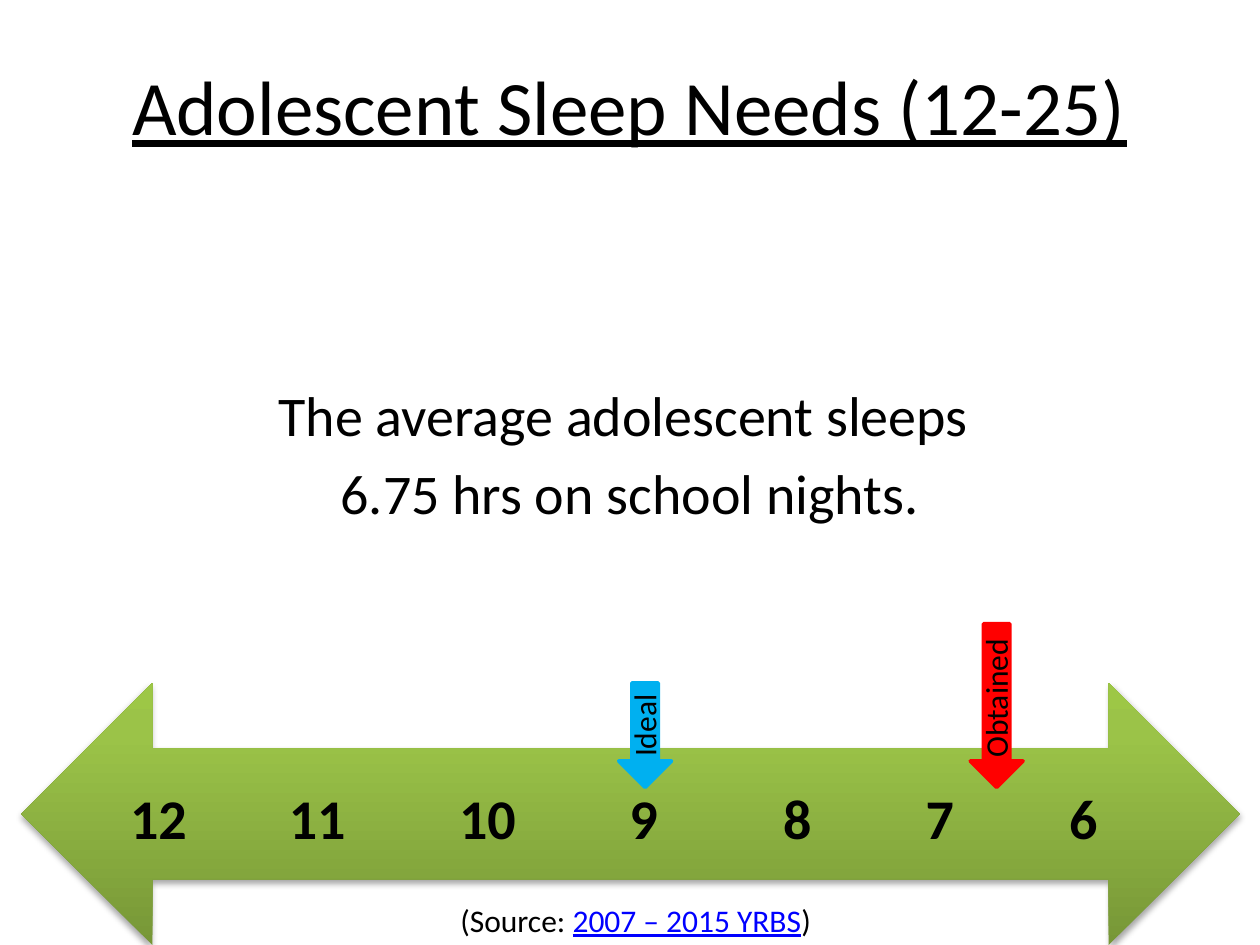
from copy import deepcopy

from lxml import etree
from pptx import Presentation
from pptx import util as u
from pptx.dml import color
from pptx.enum import shapes, text
from pptx.oxml import ns

BLACK, BLUE, RED, LINK = "000000", "00B0F0", "FF0000", "0000FF"
CENTER, LEFT = text.PP_ALIGN.CENTER, text.PP_ALIGN.LEFT


def rgb(value):
    return color.RGBColor.from_string(value)


def sub(parent, tag, **attrs):
    return etree.SubElement(parent, ns.qn(tag), attrs)


def add_run(p, wording, size, hue=BLACK, **extra):
    r = p.add_run()
    r.text = wording
    for name, value in {"name": "Calibri", "size": u.Pt(size), **extra}.items():
        setattr(r.font, name, value)
    r.font.color.rgb = rgb(hue)


def add_text(s, box, align=CENTER, anchor=text.MSO_ANCHOR.TOP):
    """Add an empty text box and return its text frame."""
    sp = s.shapes.add_textbox(*map(u.Inches, box))
    tf = sp.text_frame
    formats = {"word_wrap": True, "vertical_anchor": anchor,
               "auto_size": text.MSO_AUTO_SIZE.NONE}
    for name, value in formats.items():
        setattr(tf, name, value)
    tf.paragraphs[0].alignment = align
    return sp, tf


def add_title(s, box):
    sp, tf = add_text(s, box, anchor=text.MSO_ANCHOR.MIDDLE)
    add_run(tf.paragraphs[0], "Adolescent Sleep Needs (12-25)", 44, underline=True)


def add_statement(s, box):
    sp, tf = add_text(s, box)
    add_run(tf.paragraphs[0], "The average adolescent sleeps ", 32)
    p = tf.add_paragraph()
    p.alignment, p.space_before = CENTER, u.Pt(6.4)
    add_run(p, "6.75 hrs on school nights.", 32)


def add_scale(s, box):
    """Green double arrow with the hours of sleep along it."""
    x, y, w, h = box
    sp = s.shapes.add_shape(shapes.MSO_SHAPE.LEFT_RIGHT_ARROW, *map(u.Inches, box))
    sp.line.fill.background()

    # Three-stop gradient, from the bottom upwards
    sp.fill.gradient()
    sp.fill.gradient_angle = 90
    stop_list = sp._element.spPr.find(".//" + ns.qn("a:gsLst"))
    stop_list.append(deepcopy(stop_list[-1]))
    stops = [(0, "779737"), (0.8, "9BC348"), (1, "9DC746")]
    for stop, (position, hue) in zip(sp.fill.gradient_stops, stops):
        stop.position, stop.color.rgb = position, rgb(hue)

    # Soft shadow below
    sp.shadow.inherit = False
    effects = sp._element.spPr.find(ns.qn("a:effectLst"))
    shadow = sub(effects, "a:outerShdw", blurRad=str(u.Pt(3.1)), dist=str(u.Pt(1.8)),
                 dir="5400000", rotWithShape="0")
    sub(sub(shadow, "a:srgbClr", val=BLACK), "a:alpha", val="35000")

    # Hours, each centred on a tab stop
    hours = {12: 0.83, 11: 2.09, 10: 3.44, 9: 4.68, 8: 5.9, 7: 7.03, 6: 8.17}
    label, tf = add_text(s, (x + 0.16, y + 0.75, w - 0.59, 0.64), LEFT)
    p = tf.paragraphs[0]
    tabs = sub(p._p.get_or_add_pPr(), "a:tabLst")
    for position in hours.values():
        sub(tabs, "a:tab", pos=str(u.Inches(position)), algn="ctr")
    add_run(p, "".join(f"\t{hour}" for hour in hours), 32, bold=True)


def add_source(s, box):
    sp, tf = add_text(s, box)
    p = tf.paragraphs[0]
    add_run(p, "(Source: ", 18)
    add_run(p, "2007 – 2015 YRBS", 18, LINK, underline=True)
    add_run(p, ")", 18)


def add_marker(s, box, wording, hue, label_center, label_width):
    """Down arrow with an upright label; label_center is relative to the box."""
    x, y, w, h = box
    sp = s.shapes.add_shape(shapes.MSO_SHAPE.DOWN_ARROW, *map(u.Inches, box))
    sp.shadow.inherit = False
    sp.fill.solid()
    sp.fill.fore_color.rgb = rgb(hue)
    sp.line.color.rgb = rgb(hue)
    sp.line.width = u.Pt(2)

    dx, dy = label_center
    label_height = 0.4
    label, tf = add_text(s, (x + dx - label_width / 2, y + dy - label_height / 2,
                             label_width, label_height), LEFT)
    label.rotation = 270
    add_run(tf.paragraphs[0], wording, 18)


def main():
    prs = Presentation()
    prs.slide_width, prs.slide_height = u.Inches(10), u.Inches(7.5)
    s = prs.slides.add_slide(prs.slide_layouts[6])
    add_title(s, (0.33, 0.42, 9.33, 0.83))
    add_scale(s, (0.17, 5.42, 9.67, 2.08))
    add_source(s, (1.67, 7.1, 6.75, 0.4))
    add_marker(s, (7.7, 4.95, 0.42, 1.3), "Obtained", RED, (0.2, 0.48), 1.36)
    add_marker(s, (4.91, 5.42, 0.42, 0.83), "Ideal", BLUE, (0.2, 0.2), 0.97)
    add_statement(s, (0, 2.97, 10, 1.29))
    prs.save("out.pptx")


if __name__ == "__main__":
    main()
